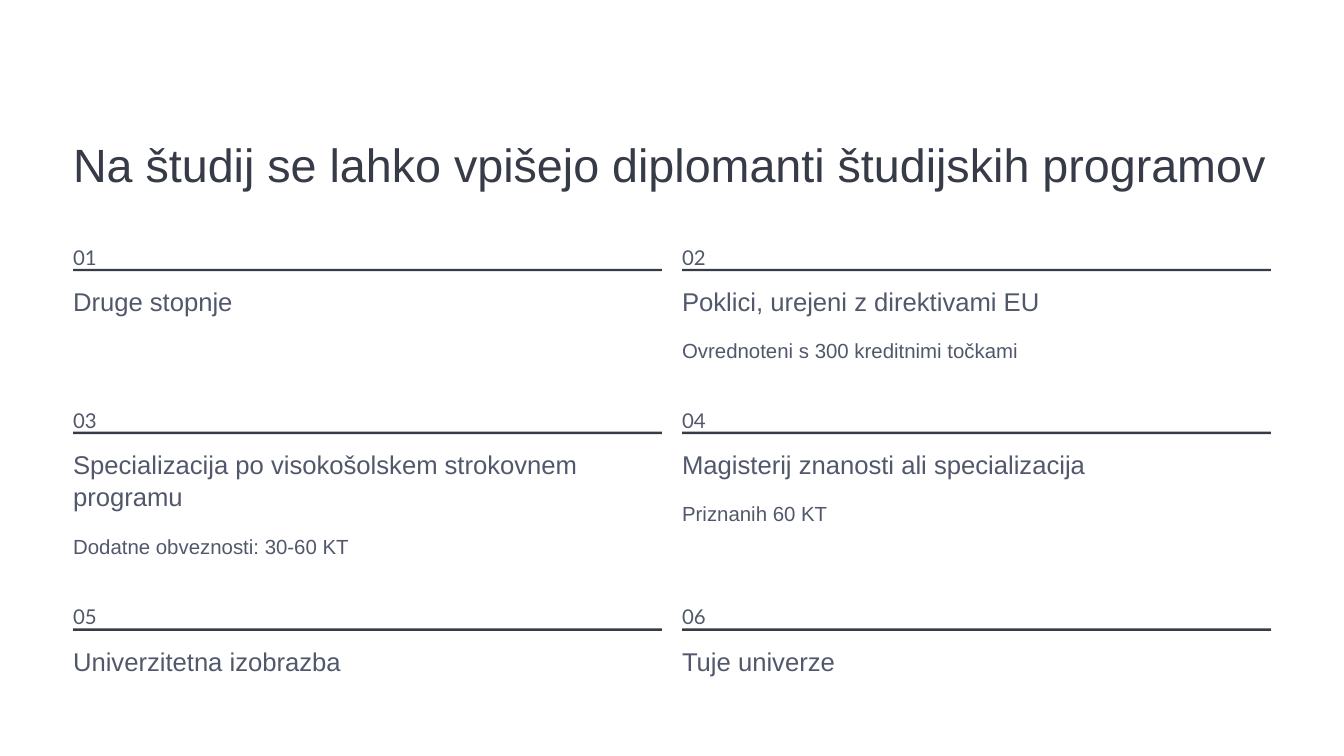
"""Build a slide listing the study programmes whose graduates may enrol."""
from pptx import Presentation
from pptx.dml.color import RGBColor
from pptx.enum.shapes import MSO_SHAPE
from pptx.util import Inches, Pt

RECTANGLE = MSO_SHAPE.RECTANGLE
COLORS = {"dark": "373B48", "body": "52586B"}
COLUMN_LEFTS = [0.87, 8.12]
ROW_TOPS = [2.81, 4.75, 7.09]
COLUMN_WIDTH = 7.01
LINE_HEIGHT = 0.39

PROGRAMMES = [
    ("Druge stopnje", 3.1, 1, ""),
    ("Poklici, urejeni z direktivami EU", 4.62, 1, "Ovrednoteni s 300 kreditnimi točkami"),
    ("Specializacija po visokošolskem strokovnem programu", COLUMN_WIDTH, 2,
     "Dodatne obveznosti: 30-60 KT"),
    ("Magisterij znanosti ali specializacija", 5.38, 1, "Priznanih 60 KT"),
    ("Univerzitetna izobrazba", 3.56, 1, ""),
    ("Tuje univerze", 3.1, 1, ""),
]

presentation = Presentation()
presentation.slide_width = Inches(16)
presentation.slide_height = Inches(9)
slide = presentation.slides.add_slide(presentation.slide_layouts[6])


def add_text(text, left, top, width, height, size, spacing, color="body", font="Arial", wrap=False):
    box = slide.shapes.add_textbox(Inches(left), Inches(top), Inches(width), Inches(height))
    frame = box.text_frame
    frame.margin_left = frame.margin_right = frame.margin_top = frame.margin_bottom = 0
    frame.word_wrap = wrap
    paragraph = frame.paragraphs[0]
    paragraph.text = text
    paragraph.line_spacing = Pt(spacing)
    paragraph.font.size = Pt(size)
    paragraph.font.name = font
    paragraph.font.color.rgb = RGBColor.from_string(COLORS[color])


add_text("Na študij se lahko vpišejo diplomanti študijskih programov",
         COLUMN_LEFTS[0], 1.51, 14.26, 1.15, 40, 55.5, color="dark", wrap=True)

for index, (heading, heading_width, lines, detail) in enumerate(PROGRAMMES):
    left = COLUMN_LEFTS[index % 2]
    top = ROW_TOPS[index // 2]
    heading_top = top + 0.58
    heading_height = lines * LINE_HEIGHT

    add_text(f"{index + 1:02d}", left, top, 0.32, 0.31, 17.5, 28.5, font="Lato")

    rule = slide.shapes.add_shape(
        RECTANGLE, Inches(left), Inches(top + 0.39), Inches(COLUMN_WIDTH), Inches(0.03))
    rule.shadow.inherit = False
    rule.fill.solid()
    rule.fill.fore_color.rgb = RGBColor.from_string(COLORS["dark"])
    rule.line.fill.background()

    add_text(heading, left, heading_top, heading_width, heading_height, 22, 27.5, wrap=lines > 1)
    if detail:
        add_text(detail, left, heading_top + heading_height + 0.14, COLUMN_WIDTH, 0.4, 17.5, 28.5)

presentation.save("out.pptx")
